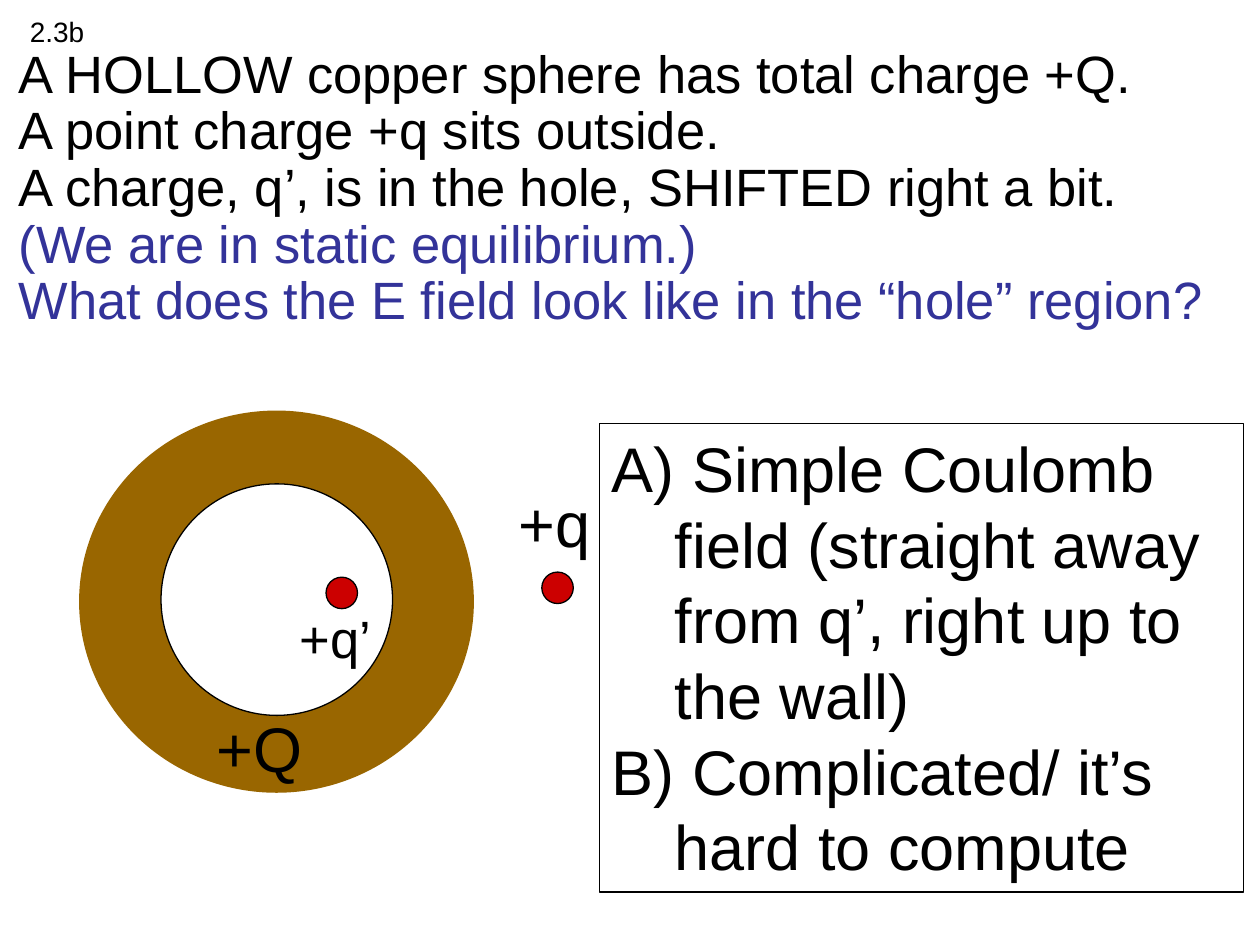
from dataclasses import dataclass

from lxml.etree import SubElement
from pptx import Presentation
from pptx.dml.color import RGBColor
from pptx.enum.shapes import MSO_SHAPE
from pptx.enum.text import MSO_ANCHOR, MSO_AUTO_SIZE, PP_ALIGN
from pptx.oxml.ns import qn
from pptx.util import Pt


@dataclass(frozen=True)
class Theme:
    font: str = "Arial"
    black: str = "000000"
    white: str = "FFFFFF"
    blue: str = "333399"
    copper: str = "996600"
    red: str = "CC0000"
    large: int = 36
    body: int = 30
    small: int = 16
    thin: float = 0.75
    thick: float = 6


THEME = Theme()
CHARGE_SIZE = 18


def color(value):
    return RGBColor.from_string(value)


def write(paragraph, text, *, size, ink=THEME.black, line_spacing=None):
    paragraph.alignment = PP_ALIGN.LEFT
    paragraph.line_spacing = line_spacing
    run = paragraph.add_run()
    run.text = text
    run.font.name = THEME.font
    run.font.size = Pt(size)
    run.font.color.rgb = color(ink)


def paragraphs(frame, count):
    return [frame.paragraphs[0]] + [frame.add_paragraph() for _ in range(count - 1)]


def hang(paragraph, indent, numbering=None):
    properties = paragraph._p.get_or_add_pPr()
    properties.set("marL", str(Pt(indent)))
    properties.set("indent", str(-Pt(indent)))
    if numbering:
        SubElement(properties, qn("a:buFont"), typeface=THEME.font)
        SubElement(properties, qn("a:buAutoNum"), type=numbering)


def add_outlined(slide, kind, left, top, width, height, *, fill=None,
                 line=THEME.black, weight=THEME.thin):
    shape = slide.shapes.add_shape(kind, Pt(left), Pt(top), Pt(width), Pt(height))
    shape.shadow.inherit = False
    if fill:
        shape.fill.solid()
        shape.fill.fore_color.rgb = color(fill)
    else:
        shape.fill.background()
    shape.line.color.rgb = color(line)
    shape.line.width = Pt(weight)
    return shape


def add_charge(slide, left, top):
    add_outlined(slide, MSO_SHAPE.OVAL, left, top, CHARGE_SIZE, CHARGE_SIZE, fill=THEME.red)


def add_label(slide, text, left, top, width, height, *, size):
    box = slide.shapes.add_textbox(Pt(left), Pt(top), Pt(width), Pt(height))
    box.text_frame.word_wrap = False
    box.text_frame.auto_size = MSO_AUTO_SIZE.SHAPE_TO_FIT_TEXT
    write(box.text_frame.paragraphs[0], text, size=size)


def add_question(slide):
    lines = [
        ("A HOLLOW copper sphere has total charge +Q.", THEME.black),
        ("A point charge +q sits outside.", THEME.black),
        ("A charge, q’, is in the hole, SHIFTED right a bit.", THEME.black),
        ("(We are in static equilibrium.)", THEME.blue),
        ("What does the E field look like in the “hole” region?", THEME.blue),
    ]
    box = slide.shapes.add_textbox(Pt(3.6), Pt(23.8), Pt(694), Pt(191.5))
    box.text_frame.word_wrap = True
    for paragraph, (text, ink) in zip(paragraphs(box.text_frame, len(lines)), lines):
        write(paragraph, text, size=THEME.body, ink=ink, line_spacing=0.9)


def add_answers(slide):
    answers = [
        (" Simple Coulomb field (straight away from q’, right up to the wall)", "alphaUcParenR"),
        ("B) Complicated/ it’s hard to compute", None),
    ]
    box = add_outlined(slide, MSO_SHAPE.RECTANGLE, 342.5, 242, 368, 267.8)
    frame = box.text_frame
    frame.word_wrap = True
    frame.auto_size = MSO_AUTO_SIZE.SHAPE_TO_FIT_TEXT
    frame.vertical_anchor = MSO_ANCHOR.TOP
    for paragraph, (text, numbering) in zip(paragraphs(frame, len(answers)), answers):
        write(paragraph, text, size=THEME.large)
        hang(paragraph, 36, numbering)


def main():
    presentation = Presentation()
    presentation.slide_width = Pt(720)
    presentation.slide_height = Pt(540)
    slide = presentation.slides.add_slide(presentation.slide_layouts[6])

    add_question(slide)
    add_outlined(slide, MSO_SHAPE.OVAL, 48.2, 237.6, 219.6, 212.4,
                 fill=THEME.copper, line=THEME.copper, weight=THEME.thick)
    add_charge(slide, 309.6, 326.9)
    add_label(slide, "+q", 289.4, 273.6, 55.4, 50.4, size=THEME.large)
    add_answers(slide)
    add_label(slide, "2.3b", 10, 5, 45.4, 26.6, size=THEME.small)
    add_outlined(slide, MSO_SHAPE.OVAL, 92, 276.5, 132.3, 132.3, fill=THEME.white)
    add_label(slide, "+Q", 116.6, 401.8, 63.4, 50.4, size=THEME.large)
    add_label(slide, "+q’", 164.2, 342.7, 55.4, 43.2, size=THEME.body)
    add_charge(slide, 186.3, 329.8)

    presentation.save("out.pptx")


if __name__ == "__main__":
    main()
